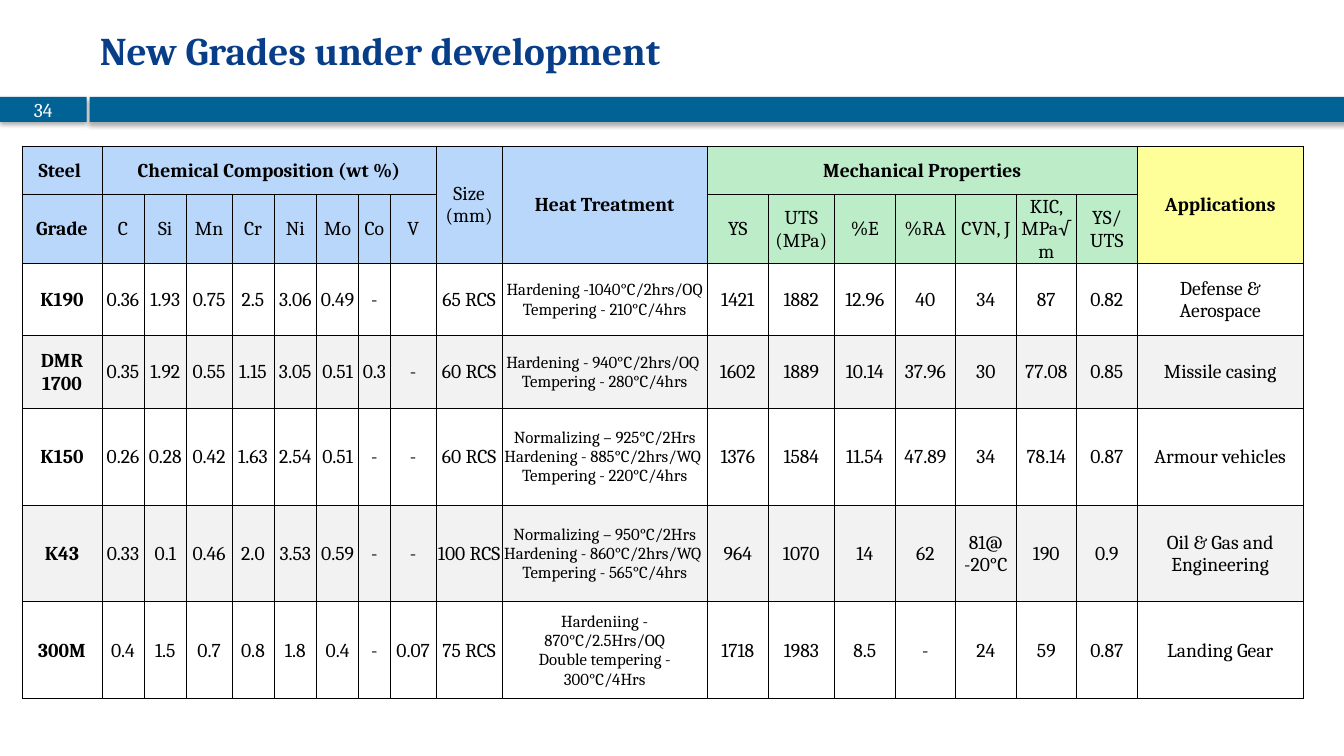
from lxml import etree
from pptx import Presentation
from pptx import oxml
from pptx.dml.color import RGBColor
from pptx.enum import shapes, text
from pptx.util import Inches, Pt

# Content
TITLE = "New Grades under development"
PAGE = "34"
ROWS = [
    ["Steel ", "Chemical Composition (wt %)", *[""] * 7, "Size (mm)",
     "Heat Treatment", "Mechanical Properties", *[""] * 6, "Applications"],
    ["Grade", "C", "Si", "Mn", "Cr", "Ni", "Mo", "Co", "V", "", "", "YS",
     "UTS (MPa)", "%E", "%RA", "CVN, J", "KIC, MPa√m", "YS/ UTS", ""],
    ["K190", "0.36", "1.93", "0.75", "2.5", "3.06", "0.49", "-", "", "65 RCS",
     "Hardening -1040°C/2hrs/OQ\vTempering - 210°C/4hrs",
     "1421", "1882", "12.96", "40", "34", "87", "0.82", "Defense & Aerospace"],
    ["DMR 1700", "0.35", "1.92", "0.55", "1.15", "3.05", "0.51", "0.3", "-", "60 RCS",
     "Hardening - 940°C/2hrs/OQ \vTempering - 280°C/4hrs",
     "1602", "1889", "10.14", "37.96", "30", "77.08", "0.85", "Missile casing"],
    ["K150", "0.26", "0.28", "0.42", "1.63", "2.54", "0.51", "-", "-", "60 RCS",
     "Normalizing – 925°C/2Hrs\nHardening - 885°C/2hrs/WQ \vTempering - 220°C/4hrs",
     "1376", "1584", "11.54", "47.89", "34", "78.14", "0.87", "Armour vehicles"],
    ["K43", "0.33", "0.1", "0.46", "2.0", "3.53", "0.59", "-", "-", "100 RCS",
     "Normalizing – 950°C/2Hrs\nHardening - 860°C/2hrs/WQ \vTempering - 565°C/4hrs",
     "964", "1070", "14", "62", "81@ -20°C", "190", "0.9", "Oil & Gas and Engineering"],
    ["300M", "0.4", "1.5", "0.7", "0.8", "1.8", "0.4", "-", "0.07", "75 RCS",
     "Hardeniing - 870°C/2.5Hrs/OQ\vDouble tempering - 300°C/4Hrs",
     "1718", "1983", "8.5", "-", "24", "59", "0.87", "Landing Gear"],
]
WIDTHS = [0.79, 0.42, 0.42, 0.45, 0.42, 0.42, 0.42, 0.31, 0.46, 0.65, 2.04,
          0.6, 0.66, 0.6, 0.6, 0.6, 0.6, 0.6, 1.65]
HEIGHTS = [0.48, 0.53, 0.72, 0.72, 0.96, 0.96, 0.96]
MERGES = [(0, 1, 0, 8), (0, 9, 1, 9), (0, 10, 1, 10), (0, 11, 0, 17), (0, 18, 1, 18)]
HEAD, SIZE, HEAT, MECH, USE = 2, 9, 10, 11, 18  # header row count, then key columns

# Style
FONT = "Cambria"
BLACK = RGBColor(0, 0, 0)
WHITE = RGBColor(255, 255, 255)
NAVY = RGBColor(0x07, 0x3E, 0x87)
TEAL = RGBColor(0x01, 0x62, 0x96)
BLUE = RGBColor(0xB9, 0xD6, 0xFB)
GREEN = RGBColor(0xBD, 0xEC, 0xC9)
YELLOW = RGBColor(0xFF, 0xFF, 0x99)
GREY = RGBColor(0xF2, 0xF2, 0xF2)
NS = 'xmlns:a="http://schemas.openxmlformats.org/drawingml/2006/main"'
SHADE = (f'<a:effectLst {NS}><a:outerShdw blurRad="{Pt(3.5)}" dist="{Pt(2.2)}" '
         'dir="5400000" rotWithShape="0"><a:srgbClr val="000000">'
         '<a:alpha val="32000"/></a:srgbClr></a:outerShdw></a:effectLst>')


def put(frame, words, size=14, color=BLACK, bold=False, align=text.PP_ALIGN.CENTER):
    frame.text = words
    frame.word_wrap = True
    frame.vertical_anchor = text.MSO_ANCHOR.MIDDLE
    for para in frame.paragraphs:
        para.alignment = align
        for run in para.runs:
            font = run.font
            font.name, font.size, font.bold = FONT, Pt(size), bold
            font.color.rgb = color


def bar(slide, left, width):
    shape = slide.shapes.add_shape(shapes.MSO_SHAPE.RECTANGLE, Inches(left),
                                   Inches(0.96), Inches(width), Inches(0.25))
    shape.fill.solid()
    shape.fill.fore_color.rgb = TEAL
    shape.line.fill.background()
    shape._element.spPr.append(oxml.parse_xml(SHADE))
    return shape


def edge(cell):
    props = cell._tc.get_or_add_tcPr()
    for side in ("lnL", "lnR", "lnT", "lnB"):
        props.append(etree.fromstring(
            f'<a:{side} {NS} w="{Pt(0.5)}"><a:solidFill><a:srgbClr val="000000"/>'
            f'</a:solidFill></a:{side}>'))


def shade(row, col):
    if row >= HEAD:
        return GREY if (row - HEAD) % 2 else None
    return YELLOW if col == USE else GREEN if col >= MECH else BLUE


def main():
    deck = Presentation()
    deck.slide_width, deck.slide_height = Inches(13.33), Inches(7.5)
    slide = deck.slides.add_slide(deck.slide_layouts[5])

    # Title and page bar
    title = slide.shapes.title
    title.left, title.top = Inches(0.89), Inches(0.08)
    title.width, title.height = Inches(10.92), Inches(0.83)
    put(title.text_frame, TITLE, size=28, color=NAVY, bold=True, align=text.PP_ALIGN.LEFT)
    put(bar(slide, 0, 0.86).text_frame, PAGE, color=WHITE)
    bar(slide, 0.89, 12.47)

    # Table grid
    table = slide.shapes.add_table(len(ROWS), len(WIDTHS), Inches(0.22), Inches(1.45),
                                   Inches(sum(WIDTHS)), Inches(sum(HEIGHTS))).table
    table.first_row = table.horz_banding = False
    for col, width in zip(table.columns, WIDTHS):
        col.width = Inches(width)
    for row, height in zip(table.rows, HEIGHTS):
        row.height = Inches(height)

    # Cells
    for r, row in enumerate(ROWS):
        for c, words in enumerate(row):
            cell = table.cell(r, c)
            edge(cell)
            color = shade(r, c)
            if color is None:
                cell.fill.background()
            else:
                cell.fill.solid()
                cell.fill.fore_color.rgb = color
            put(cell.text_frame, words, size=12 if r >= HEAD and c == HEAT else 14,
                bold=c == 0 or (r == 0 and c != SIZE))
            cell.vertical_anchor = text.MSO_ANCHOR.MIDDLE
            cell.margin_left = cell.margin_right = cell.margin_top = Inches(0.01)
            cell.margin_bottom = 0
    for top, left, low, right in MERGES:
        table.cell(top, left).merge(table.cell(low, right))

    deck.save("out.pptx")


if __name__ == "__main__":
    main()
